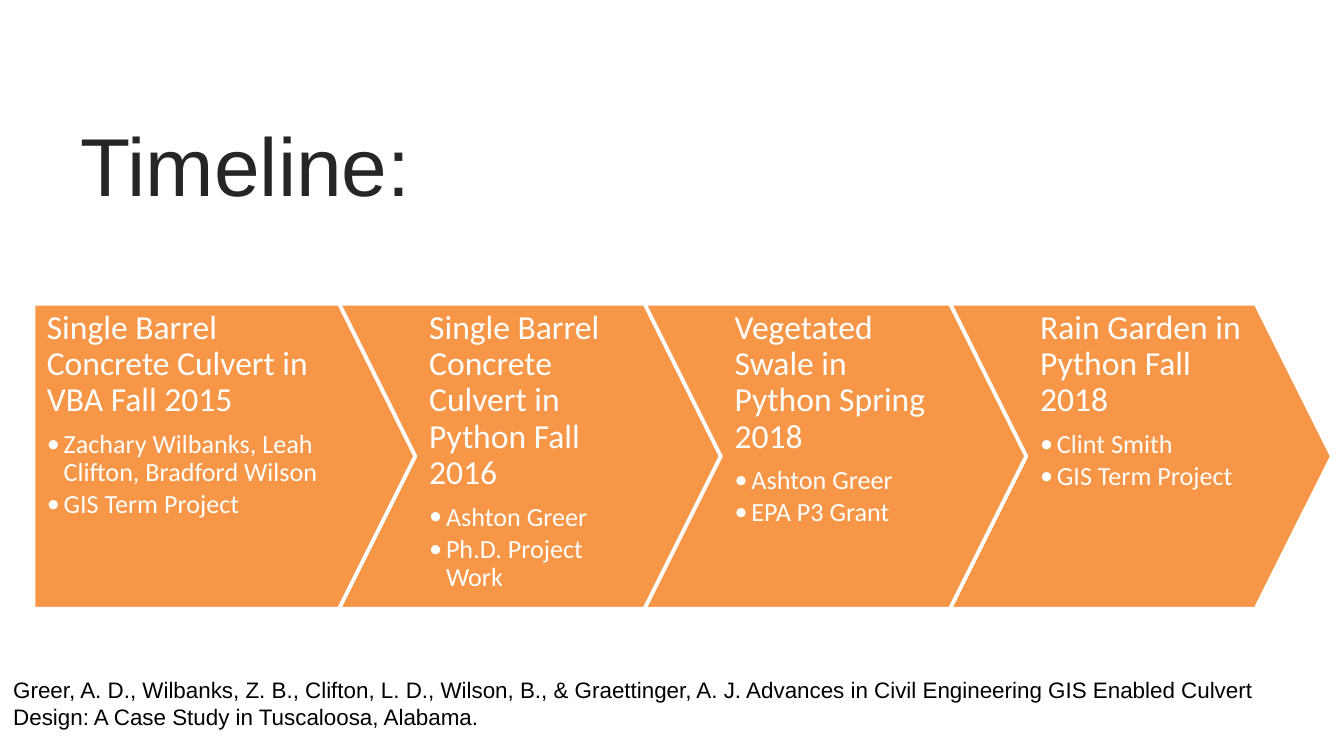
import pptx
import pptx.dml.color
import pptx.enum.text
import pptx.oxml
import pptx.oxml.ns
import pptx.util

Inches, Pt = pptx.util.Inches, pptx.util.Pt
ORANGE = pptx.dml.color.RGBColor(0xF7, 0x96, 0x46)
WHITE = pptx.dml.color.RGBColor(0xFF, 0xFF, 0xFF)
CHARCOAL = pptx.dml.color.RGBColor(0x26, 0x26, 0x26)
BLACK = pptx.dml.color.RGBColor(0, 0, 0)

TITLE = "Timeline:"
STAGES = [
    ("Single Barrel Concrete Culvert in VBA Fall 2015",
     ["Zachary Wilbanks, Leah Clifton, Bradford Wilson", "GIS Term Project"]),
    ("Single Barrel Concrete Culvert in Python Fall 2016",
     ["Ashton Greer", "Ph.D. Project Work"]),
    ("Vegetated Swale in Python Spring 2018",
     ["Ashton Greer", "EPA P3 Grant"]),
    ("Rain Garden in Python Fall 2018",
     ["Clint Smith", "GIS Term Project"]),
]
CITATION = (
    "Greer, A. D., Wilbanks, Z. B., Clifton, L. D., Wilson, B., & Graettinger, A. J. "
    "Advances in Civil Engineering GIS Enabled Culvert Design: "
    "A Case Study in Tuscaloosa, Alabama."
)

SLIDE_WIDTH = 10
SLIDE_HEIGHT = SLIDE_WIDTH * 9 / 16
BAND_LEFT, BAND_TOP, BAND_RIGHT, BAND_HEIGHT = 0.25, 2.26, 9.91, 2.27
POINT = BAND_HEIGHT / 4
PITCH = (BAND_RIGHT - BAND_LEFT - POINT) / len(STAGES)
BULLET_INDENT = Pt(9)


def style(para, size, color, font):
    para.alignment = pptx.enum.text.PP_ALIGN.LEFT
    para.font.size = Pt(size)
    para.font.name = font
    para.font.color.rgb = color


def add_text(page, text, left, top, width, height, size, color, anchor):
    box = page.shapes.add_textbox(Inches(left), Inches(top), Inches(width), Inches(height))
    frame = box.text_frame
    frame.word_wrap = True
    frame.vertical_anchor = anchor
    frame.text = text
    style(frame.paragraphs[0], size, color, "Arial")


def add_bullet(para):
    properties = para._p.get_or_add_pPr()
    properties.set("marL", str(BULLET_INDENT))
    properties.set("indent", str(-BULLET_INDENT))
    namespace = pptx.oxml.ns.nsdecls("a")
    for element in ('buFont {} typeface="Calibri"', 'buChar {} char="•"'):
        properties.append(pptx.oxml.parse_xml(f"<a:{element.format(namespace)}/>"))


def add_arrow(page, left, notched):
    """Draw one arrow of the band, with a notch at its left if asked."""
    shoulder, tip = left + PITCH, left + PITCH + POINT
    middle, bottom = BAND_TOP + BAND_HEIGHT / 2, BAND_TOP + BAND_HEIGHT
    corners = [(shoulder, BAND_TOP), (tip, middle), (shoulder, bottom), (left, bottom)]
    if notched:
        corners.append((left + POINT, middle))
    builder = page.shapes.build_freeform(Inches(left), Inches(BAND_TOP))
    builder.add_line_segments([(Inches(x), Inches(y)) for x, y in corners], close=True)
    arrow = builder.convert_to_shape()
    arrow.shadow.inherit = False
    arrow.fill.solid()
    arrow.fill.fore_color.rgb = ORANGE
    arrow.line.color.rgb = WHITE
    arrow.line.width = Pt(2)
    return arrow


def fill_arrow(arrow, heading, details, notched):
    frame = arrow.text_frame
    frame.word_wrap = True
    frame.vertical_anchor = pptx.enum.text.MSO_ANCHOR.TOP
    frame.margin_left = Inches(0.67 if notched else 0.1)
    frame.margin_right = Inches(0.67 if notched else 0.69)
    frame.margin_top = frame.margin_bottom = Inches(0.05)
    frame.text = "\n".join([heading, *details])
    for index, para in enumerate(frame.paragraphs):
        para.line_spacing = 0.9
        para.space_after = Pt(2.1 if index else 6.3)
        if index:
            para.level = 1
            add_bullet(para)
        style(para, 14 if index else 18, WHITE, "Calibri")


def main():
    deck = pptx.Presentation()
    deck.slide_width, deck.slide_height = Inches(SLIDE_WIDTH), Inches(SLIDE_HEIGHT)
    page = deck.slides.add_slide(deck.slide_layouts[6])
    anchors = pptx.enum.text.MSO_ANCHOR
    add_text(page, TITLE, 0.5, 0.75, 9, 0.94, 44, CHARCOAL, anchors.MIDDLE)
    for column, (heading, details) in enumerate(STAGES):
        notched = column > 0
        arrow = add_arrow(page, BAND_LEFT + column * PITCH, notched)
        fill_arrow(arrow, heading, details, notched)
    add_text(page, CITATION, 0, 4.98, BAND_RIGHT, 0.5, 12, BLACK, anchors.TOP)
    deck.save("out.pptx")


if __name__ == "__main__":
    main()
